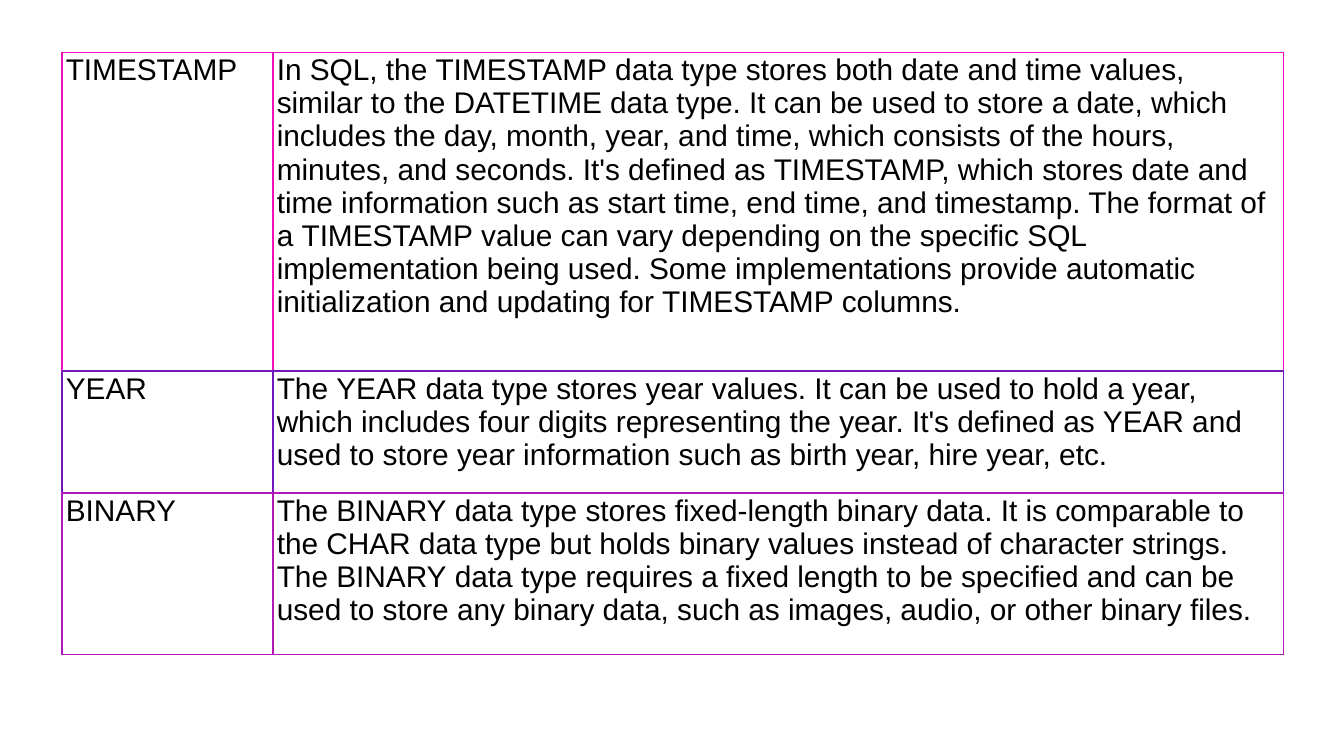
from lxml.etree import SubElement
from pptx import Presentation
from pptx.dml.color import RGBColor
from pptx.oxml.ns import qn
from pptx.util import Inches, Pt

WHITE = RGBColor(0xFF, 0xFF, 0xFF)
BLACK = RGBColor(0x00, 0x00, 0x00)
PINK = RGBColor(0xF0, 0x11, 0xBA)
INDIGO = RGBColor(0x70, 0x18, 0xBA)
PURPLE = RGBColor(0xB0, 0x18, 0xBA)

HARD_SPACE = chr(160)
COLUMN_WIDTHS = [1.57, 7.52]
DATA_TYPES = [
    ("TIMESTAMP",
     "In SQL, the~TIMESTAMP~data type stores both date and time values, similar "
     "to the~DATETIME~data type. It can be used to store a date, which includes "
     "the day, month, year, and time, which consists of the hours, minutes, and "
     "seconds. It's defined as~TIMESTAMP, which stores date and time "
     "information such as start time, end time, and timestamp. The format of "
     "a~TIMESTAMP~value can vary depending on the specific SQL "
     "implementation being used. Some implementations provide automatic "
     "initialization and updating for~TIMESTAMP~columns.",
     2.37, PINK, INDIGO),
    ("YEAR",
     "The~YEAR~data type stores year values. It can be used to hold a year, "
     "which includes four digits representing the year. It's defined as~YEAR~and "
     "used to store year information such as birth year, hire year, etc.",
     0.91, INDIGO, PURPLE),
    ("BINARY",
     "The~BINARY~data type stores fixed-length binary data. It is comparable~to "
     "the CHAR data type but holds binary values instead of character strings. "
     "The~BINARY~data type requires a fixed length to be specified and can be "
     "used to store any binary data, such as images, audio, or other binary files.",
     1.2, PURPLE, PURPLE),
]


class SlideBuilder:
    font = "Arial"
    size = Pt(16)
    border_width = Pt(1)

    def __init__(self, prs):
        self.s = prs.slides.add_slide(prs.slide_layouts[6])

    def border(self, cell, side, color):
        tc_pr = cell._tc.get_or_add_tcPr()
        ln = SubElement(tc_pr, qn(f"a:ln{side}"), w=str(self.border_width))
        fill = SubElement(ln, qn("a:solidFill"))
        SubElement(fill, qn("a:srgbClr"), val=str(color))

    def cell(self, cell, text, color, bottom):
        for side in "LRT":
            self.border(cell, side, color)
        self.border(cell, "B", bottom)
        cell.fill.solid()
        cell.fill.fore_color.rgb = WHITE
        cell.margin_left = cell.margin_right = Inches(0.03)
        cell.margin_top = cell.margin_bottom = Inches(0.01)
        p = cell.text_frame.paragraphs[0]
        p.text = text.replace("~", HARD_SPACE)
        p.font.name = self.font
        p.font.size = self.size
        p.font.color.rgb = BLACK

    def table(self, left, top, widths, rows):
        height = sum(row[2] for row in rows)
        table = self.s.shapes.add_table(
            len(rows), len(widths), Inches(left), Inches(top),
            Inches(sum(widths)), Inches(height)).table
        table.first_row = table.horz_banding = False
        for column, width in zip(table.columns, widths):
            column.width = Inches(width)
        for row, (name, description, height, color, bottom) in zip(table.rows, rows):
            row.height = Inches(height)
            for cell, text in zip(row.cells, (name, description)):
                self.cell(cell, text, color, bottom)


def main():
    prs = Presentation()
    prs.slide_width = Inches(10)
    prs.slide_height = Inches(10 * 9 / 16)
    SlideBuilder(prs).table(0.46, 0.39, COLUMN_WIDTHS, DATA_TYPES)
    prs.save("out.pptx")


if __name__ == "__main__":
    main()
